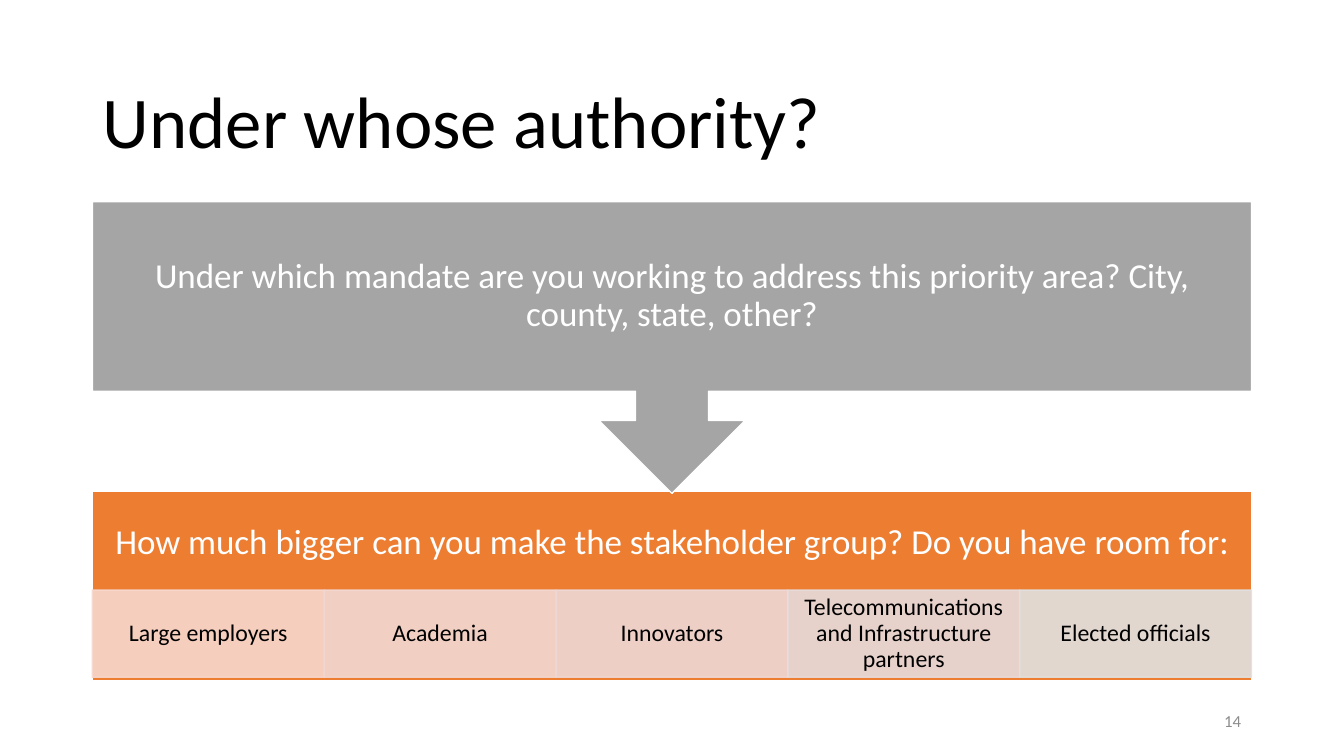
import pptx
import pptx.dml.color
import pptx.enum.shapes
import pptx.enum.text
import pptx.oxml.ns
import pptx.util
from lxml import etree

# Content
TITLE = "Under whose authority?"
NUMBER = "14"
MANDATE = ("Under which mandate are you working to address this priority area? "
           "City, county, state, other?")
QUESTION = "How much bigger can you make the stakeholder group? Do you have room for:"
GROUPS = [
    ("Large employers", "cell1"),
    ("Academia", "cell2"),
    ("Innovators", "cell3"),
    ("Telecommunications and Infrastructure partners", "cell4"),
    ("Elected officials", "cell5"),
]

# Formats
COLORS = {
    "black": "000000", "white": "FFFFFF", "number": "8C8C8C",
    "gray": "A5A5A5", "orange": "ED7D31",
    "cell1": "F8D7CE", "cell2": "F2D8D2", "cell3": "EDD9D7",
    "cell4": "E7DCDC", "cell5": "E1E1E1",
}
ALIGN = pptx.enum.text.PP_ALIGN
SHAPE = pptx.enum.shapes.MSO_SHAPE
STYLES = {  # size, color, alignment, line spacing, side inset, top inset
    "title": (52, "black", ALIGN.LEFT, 0.9, 10, 5),
    "number": (12, "number", ALIGN.RIGHT, 1.0, 10, 5),
    "block": (25, "white", ALIGN.CENTER, 0.9, 18, 18),
    "cell": (17, "black", ALIGN.CENTER, 0.9, 12, 2),
}

# Layout in px, 96 to the inch
PX = 9525
LEFT, WIDTH = 88, 1104
BLOCK_H = 180
MANDATE_TOP, CALLOUT_H = 192, 278
QUESTION_TOP, HEADER_H = 468, 98
CELL_TOP, CELL_H = 562, 83

prs = pptx.Presentation()
prs.slide_width, prs.slide_height = 1280 * PX, 720 * PX
s = prs.slides.add_slide(prs.slide_layouts[6])


def emu(*lengths):
    return [round(v * PX) for v in lengths]


def rgb(name):
    return pptx.dml.color.RGBColor.from_string(COLORS[name])


def add_text(text, style, *box):
    size, color, align, spacing, side, top = STYLES[style]
    tf = s.shapes.add_textbox(*emu(*box)).text_frame
    side, top = emu(side, top)
    frame = {"word_wrap": True, "margin_left": side, "margin_right": side,
             "margin_top": top, "margin_bottom": top,
             "vertical_anchor": pptx.enum.text.MSO_ANCHOR.MIDDLE}
    for key, value in frame.items():
        setattr(tf, key, value)
    p = tf.paragraphs[0]
    p.alignment, p.line_spacing = align, spacing
    r = p.add_run()
    r.text = text
    for key, value in {"name": "Calibri", "size": pptx.util.Pt(size)}.items():
        setattr(r.font, key, value)
    r.font.color.rgb = rgb(color)


def add_block(kind, fill, line, *box, alpha=100):
    sp = s.shapes.add_shape(kind, *emu(*box))
    sp.shadow.inherit = False
    sp.fill.solid()
    sp.fill.fore_color.rgb = rgb(fill)
    sp.line.color.rgb = rgb(line)
    sp.line.width = pptx.util.Pt(1)
    if alpha < 100:
        qn = pptx.oxml.ns.qn
        for clr in sp.fill._xPr.iter(qn("a:srgbClr")):
            etree.SubElement(clr, qn("a:alpha"), val=str(alpha * 1000))
    return sp


# Title and slide number
add_text(TITLE, "title", LEFT, 59, WIDTH, 119)
add_text(NUMBER, "number", 904, 667, 288, 38)

# Stakeholder block
add_block(SHAPE.RECTANGLE, "orange", "white", LEFT, QUESTION_TOP, WIDTH, BLOCK_H)
add_text(QUESTION, "block", LEFT, QUESTION_TOP, WIDTH, HEADER_H)

# Row of stakeholder groups
cell_w = WIDTH / len(GROUPS)
for i, (group, color) in enumerate(GROUPS):
    box = (LEFT + i * cell_w, CELL_TOP, cell_w, CELL_H)
    add_block(SHAPE.RECTANGLE, color, color, *box, alpha=90)
    add_text(group, "cell", *box)

# Mandate block pointing down
callout = add_block(SHAPE.UP_ARROW_CALLOUT, "gray", "white",
                    LEFT, MANDATE_TOP, WIDTH, CALLOUT_H)
callout.rotation = 180
add_text(MANDATE, "block", LEFT, MANDATE_TOP, WIDTH, BLOCK_H)

prs.save("out.pptx")
